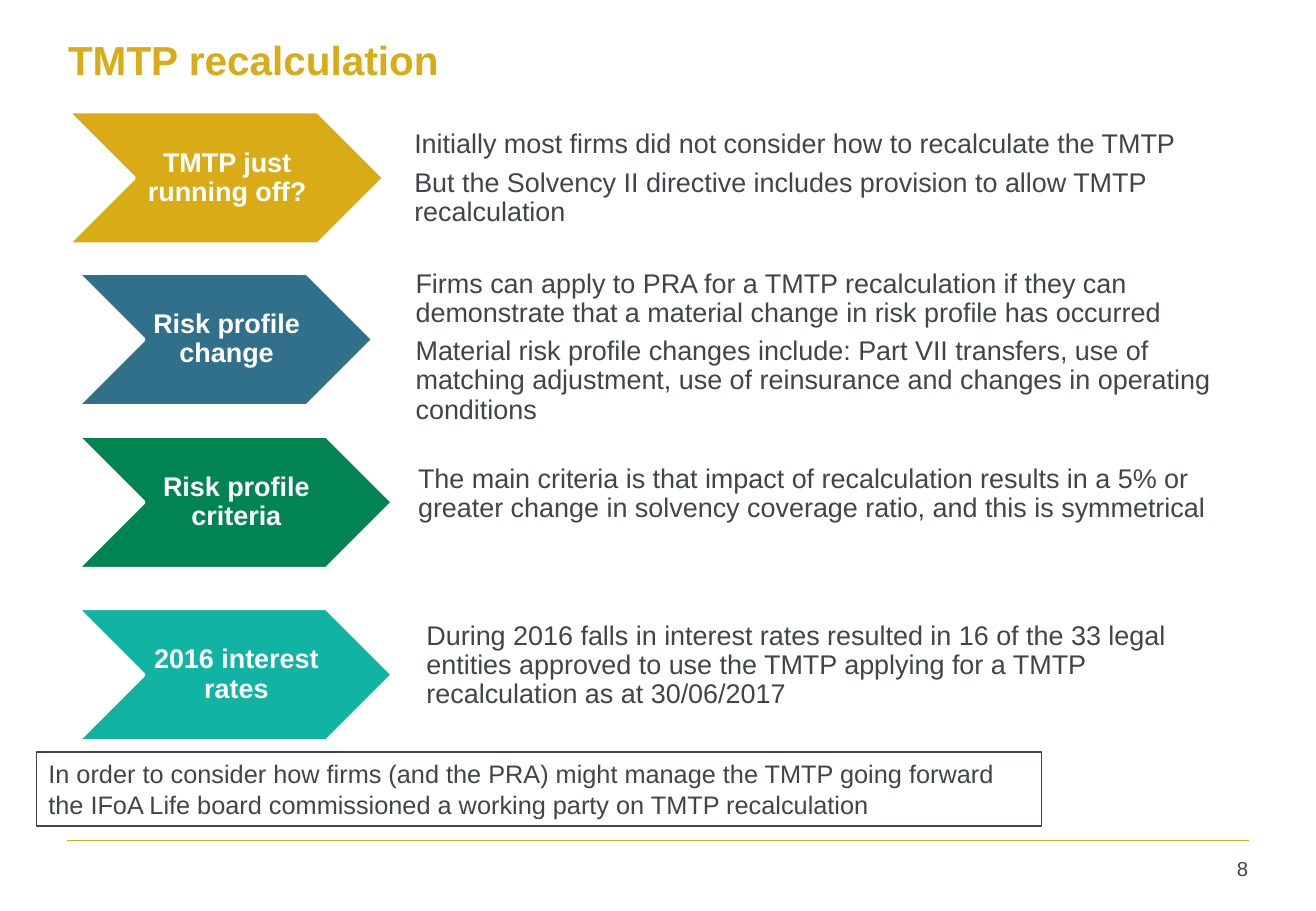
from lxml import etree
from pptx import Presentation
from pptx.dml.color import RGBColor
from pptx.enum.shapes import MSO_CONNECTOR, MSO_SHAPE
from pptx.enum.text import MSO_ANCHOR, PP_ALIGN
from pptx.oxml.ns import qn
from pptx.util import Inches, Pt

CHEVRON, RECTANGLE = MSO_SHAPE.CHEVRON, MSO_SHAPE.RECTANGLE
STRAIGHT = MSO_CONNECTOR.STRAIGHT
TOP, MIDDLE = MSO_ANCHOR.TOP, MSO_ANCHOR.MIDDLE
LEFT, CENTER, RIGHT = PP_ALIGN.LEFT, PP_ALIGN.CENTER, PP_ALIGN.RIGHT

GOLD, INK, WHITE = "D9AB16", "3F4548", "FFFFFF"
LABEL_INSETS = (0.02, 0.01, 0, 0.01)
DETAIL_INSETS = (0.2, 0.01, 0.2, 0.01)
CHEVRON_HEIGHT = 1.09
LABEL_INDENT = 0.55

STEPS = [
    (0.56, 0.92, 2.6, GOLD, "TMTP just running off?", (3.21, 0.84, 7.16, 1.26),
     ["Initially most firms did not consider how to recalculate the TMTP",
      "But the Solvency II directive includes provision to allow TMTP recalculation"]),
    (0.64, 2.25, 2.43, "30708A", "Risk profile change", (3.22, 2.31, 7.31, 1.1),
     ["Firms can apply to PRA for a TMTP recalculation if they can demonstrate "
      "that a material change in risk profile has occurred",
      "Material risk profile changes include: Part VII transfers, use of matching "
      "adjustment, use of reinsurance and changes in operating conditions"]),
    (0.64, 3.59, 2.59, "008452", "Risk profile criteria", (3.24, 3.44, 6.99, 1.26),
     ["The main criteria is that impact of recalculation results in a 5% or greater "
      "change in solvency coverage ratio, and this is symmetrical"]),
    (0.64, 5.01, 2.59, "11B3A2", "2016 interest rates", (3.31, 4.85, 7.06, 1.26),
     ["During 2016 falls in interest rates resulted in 16 of the 33 legal entities "
      "approved to use the TMTP applying for a TMTP recalculation as at 30/06/2017"]),
]


def colour(hex_code):
    return RGBColor.from_string(hex_code)


def write(frame, paragraphs, size=16, color=INK, bold=False, align=LEFT, anchor=MIDDLE,
          insets=(0.1, 0.05, 0.1, 0.05), line_spacing=1.0, space_after=0):
    frame.word_wrap = True
    frame.vertical_anchor = anchor
    (frame.margin_left, frame.margin_top,
     frame.margin_right, frame.margin_bottom) = map(Inches, insets)
    for index, text in enumerate(paragraphs):
        paragraph = frame.add_paragraph() if index else frame.paragraphs[0]
        paragraph.text = text
        paragraph.alignment = align
        paragraph.line_spacing = line_spacing
        paragraph.space_before = Pt(0)
        paragraph.space_after = Pt(space_after)
        font = paragraph.font
        font.name, font.size, font.bold = "Arial", Pt(size), bold
        font.color.rgb = colour(color)


class SlideBuilder:
    def __init__(self, slide):
        self.slide = slide

    def title(self, text, box):
        heading = self.slide.shapes.title
        heading.left, heading.top, heading.width, heading.height = map(Inches, box)
        write(heading.text_frame, [text], size=24, color=GOLD, bold=True)

    def text(self, paragraphs, box, **style):
        area = self.slide.shapes.add_textbox(*map(Inches, box))
        write(area.text_frame, paragraphs, **style)

    def shape(self, kind, box, line, line_width, fill=None):
        item = self.slide.shapes.add_shape(kind, *map(Inches, box))
        item.shadow.inherit = False
        if fill:
            item.fill.solid()
            item.fill.fore_color.rgb = colour(fill)
        else:
            item.fill.background()
        item.line.color.rgb = colour(line)
        item.line.width = Pt(line_width)
        return item

    def rule(self, left, right, y):
        footer_rule = self.slide.shapes.add_connector(
            STRAIGHT, Inches(left), Inches(y), Inches(right), Inches(y))
        footer_rule.line.color.rgb = colour(GOLD)
        footer_rule.line.width = Pt(1)
        etree.SubElement(footer_rule.line._get_or_add_ln().getparent(), qn("a:effectLst"))

    def step(self, left, top, width, fill, label, detail_box, details):
        self.shape(CHEVRON, (left, top, width, CHEVRON_HEIGHT), WHITE, 2, fill)
        label_box = (left + LABEL_INDENT, top, width - 2 * LABEL_INDENT, CHEVRON_HEIGHT)
        spacing = {"line_spacing": 0.9, "space_after": 5.6}
        self.text([label], label_box, color=WHITE, bold=True, align=CENTER,
                  insets=LABEL_INSETS, **spacing)
        self.text(details, detail_box, insets=DETAIL_INSETS, **spacing)


def main():
    deck = Presentation()
    deck.slide_width, deck.slide_height = Inches(10.83), Inches(7.5)
    builder = SlideBuilder(deck.slides.add_slide(deck.slide_layouts[5]))
    builder.rule(0.55, 10.28, 6.92)
    builder.title("TMTP recalculation", (0.46, -0.14, 9.82, 1.25))
    builder.text(["8"], (9.6, 7, 0.77, 0.37), size=12, align=RIGHT, anchor=TOP)
    for step in STEPS:
        builder.step(*step)
    conclusion = builder.shape(RECTANGLE, (0.3, 6.19, 8.27, 0.61), INK, 0.75)
    write(conclusion.text_frame,
          ["In order to consider how firms (and the PRA) might manage the TMTP going forward "
           "the IFoA Life board commissioned a working party on TMTP recalculation"], size=15)
    deck.save("out.pptx")


if __name__ == "__main__":
    main()
